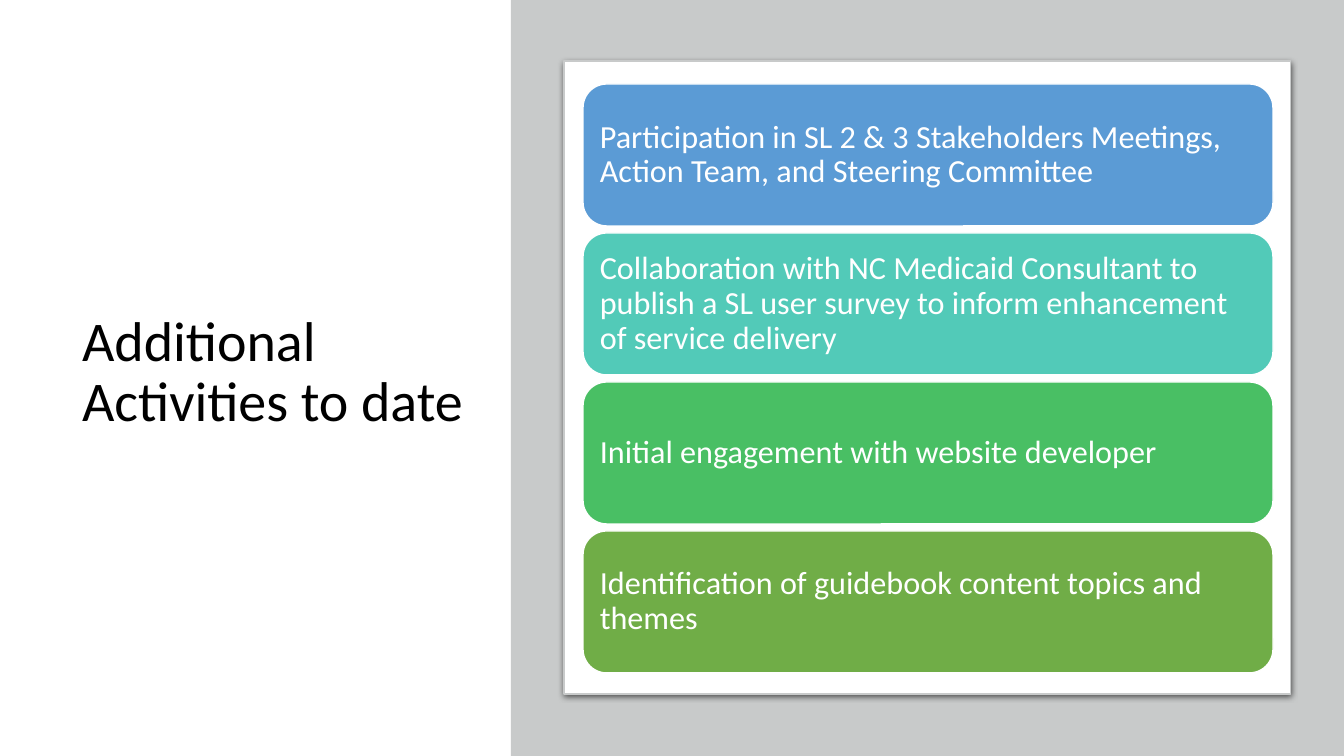
import pptx
import pptx.util
import pptx.dml.color
import pptx.enum.shapes
import pptx.enum.text
import pptx.oxml
import pptx.oxml.ns

TITLE = "Additional Activities to date"
ACTIVITIES = [
    ("Participation in SL 2 & 3 Stakeholders Meetings, Action Team, and Steering Committee", "blue"),
    ("Collaboration with NC Medicaid Consultant to publish a SL user survey "
     "to inform enhancement of service delivery", "teal"),
    ("Initial engagement with website developer", "green"),
    ("Identification of guidebook content topics and themes", "olive"),
]
COLORS = {
    "black": "000000", "white": "FFFFFF", "grey": "C8CACA",
    "blue": "5B9BD5", "teal": "52CAB8", "green": "49BF64", "olive": "70AD47",
}
FONT = "Calibri"
SLIDE_W, SLIDE_H = 1344, 756
TITLE_BOX = (72, 70, 404, 607)
SIDE_LEFT = 511
PANEL_BOX = (564, 61, 727, 633)
CARD_LEFT, CARD_TOP, CARD_W, CARD_H, CARD_GAP = 583, 84, 690, 142, 7


def px(n):
    return pptx.util.Emu(round(n * 914400 / 100.8))


def rgb(name):
    return pptx.dml.color.RGBColor.from_string(COLORS[name])


def write(sp, text, size, color, inset=0.1, space_after=0):
    tf = sp.text_frame
    tf.word_wrap = True
    tf.auto_size = pptx.enum.text.MSO_AUTO_SIZE.NONE
    tf.vertical_anchor = pptx.enum.text.MSO_ANCHOR.MIDDLE
    tf.margin_left = tf.margin_right = pptx.util.Inches(inset)
    tf.margin_top = tf.margin_bottom = pptx.util.Inches(inset)
    p = tf.paragraphs[0]
    p.alignment = pptx.enum.text.PP_ALIGN.LEFT
    p.line_spacing = 0.9
    p.space_after = pptx.util.Pt(space_after)
    r = p.add_run()
    r.text = text
    r.font.name = FONT
    r.font.size = pptx.util.Pt(size)
    r.font.color.rgb = rgb(color)


def add_box(slide, kind, box, fill, line=None, width=1):
    sp = slide.shapes.add_shape(kind, *map(px, box))
    sp.shadow.inherit = False
    sp.fill.solid()
    sp.fill.fore_color.rgb = rgb(fill)
    if line:
        sp.line.color.rgb = rgb(line)
        sp.line.width = pptx.util.Pt(width)
    else:
        sp.line.fill.background()
    return sp


def add_shadow(sp, blur, distance, alpha):
    """Drop a black shadow straight down; blur and distance in points."""
    effects = sp.element.spPr.find(pptx.oxml.ns.qn("a:effectLst"))
    effects.append(pptx.oxml.parse_xml(
        f'<a:outerShdw {pptx.oxml.ns.nsdecls("a")} blurRad="{pptx.util.Pt(blur)}" '
        f'dist="{pptx.util.Pt(distance)}" dir="5400000" algn="ctr" rotWithShape="0">'
        f'<a:srgbClr val="{COLORS["black"]}"><a:alpha val="{alpha * 1000}"/></a:srgbClr>'
        '</a:outerShdw>'))


def main():
    prs = pptx.Presentation()
    prs.slide_width, prs.slide_height = px(SLIDE_W), px(SLIDE_H)
    slide = prs.slides.add_slide(prs.slide_layouts[5])
    rect = pptx.enum.shapes.MSO_SHAPE.RECTANGLE
    rounded = pptx.enum.shapes.MSO_SHAPE.ROUNDED_RECTANGLE

    title = slide.shapes.title
    title.left, title.top, title.width, title.height = map(px, TITLE_BOX)
    write(title, TITLE, 40, "black")

    add_box(slide, rect, (SIDE_LEFT, 0, SLIDE_W - SIDE_LEFT, SLIDE_H), "grey")
    panel = add_box(slide, rounded, PANEL_BOX, "white", line="grey", width=0.75)
    panel.adjustments[0] = 0
    add_shadow(panel, blur=4.5, distance=1.5, alpha=63)

    for i, (text, color) in enumerate(ACTIVITIES):
        top = CARD_TOP + i * (CARD_H + CARD_GAP)
        card = add_box(slide, rounded, (CARD_LEFT, top, CARD_W, CARD_H), color, line="white")
        write(card, text, 23, "white", space_after=8)

    prs.save("out.pptx")


if __name__ == "__main__":
    main()
